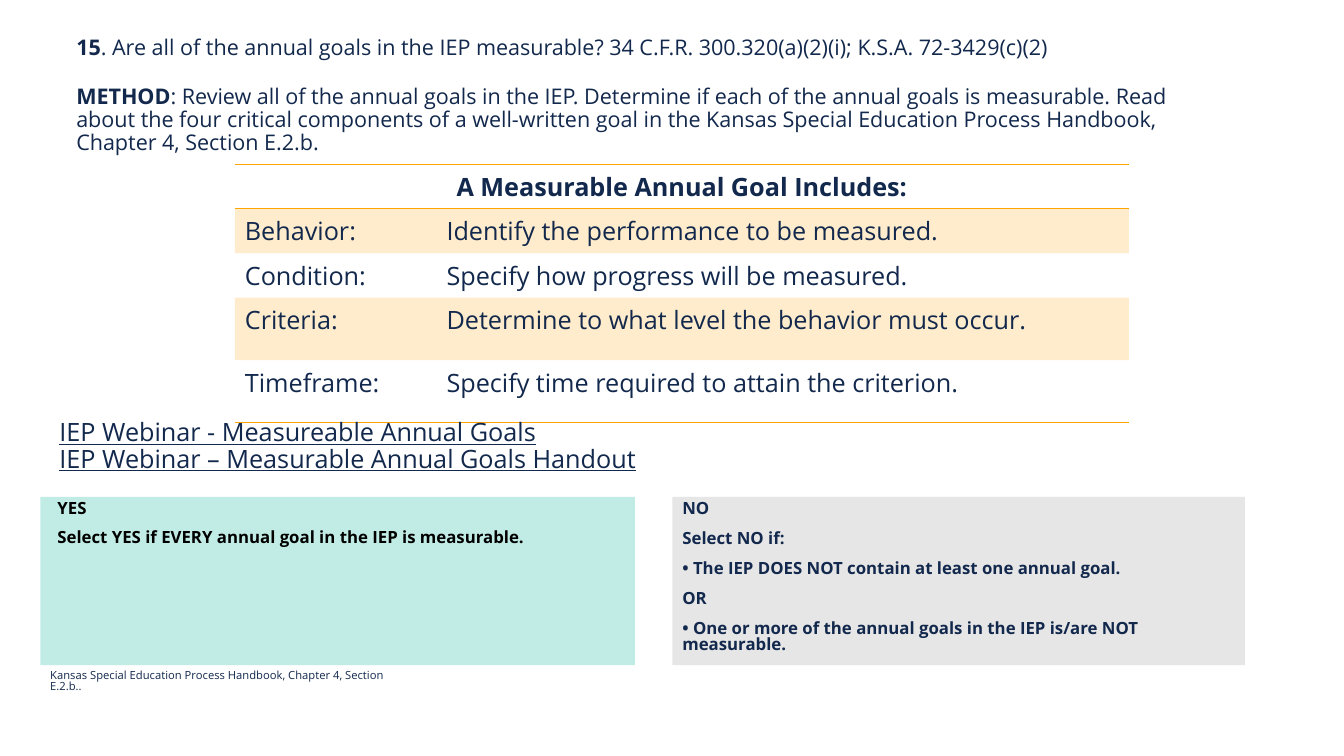
from lxml.etree import SubElement
from pptx import Presentation
from pptx.dml.color import RGBColor
from pptx.enum.shapes import MSO_SHAPE
from pptx.enum.text import MSO_ANCHOR, PP_ALIGN
from pptx.oxml.ns import qn
from pptx.util import Inches, Pt

COLORS = {"navy": "12284C", "black": "000000", "gold": "FFA400",
          "mint": "C1ECE5", "gray": "E6E6E6"}
FONT = "Open Sans"
WIDTH, HEIGHT = Inches(13.33), Inches(7.5)
COLUMNS, ROWS = 32, 18
PLAIN_STYLE = "{2D5ABB26-0587-4C30-8999-92F81FD0307C}"


def across(columns):
    """Return the width of a number of grid columns."""
    return round(WIDTH * columns / COLUMNS)


def down(rows):
    """Return the height of a number of grid rows."""
    return round(HEIGHT * rows / ROWS)


def place(box):
    """Turn a grid box into left, top, width and height."""
    left, top, width, height = box
    return across(left), down(top), across(width), down(height)


def style_run(run, size, color="navy", bold=False, underline=False):
    """Apply the slide's font to one run."""
    run.font.name = FONT
    run.font.size = Pt(size)
    run.font.bold = bold
    run.font.underline = underline
    run.font.color.rgb = RGBColor.from_string(COLORS[color])


def write_lines(frame, lines, size, spacing, before=0, **style):
    """Write one paragraph per line in a shared style."""
    frame.word_wrap = True
    frame.vertical_anchor = MSO_ANCHOR.TOP
    frame.text = "\n".join(lines)
    for index, paragraph in enumerate(frame.paragraphs):
        paragraph.alignment = PP_ALIGN.LEFT
        paragraph.line_spacing = spacing
        paragraph.space_before = Pt(before if index else 0)
        for run in paragraph.runs:
            style_run(run, size, **style)


def add_text(slide, box, lines, size, spacing, before=0, **style):
    """Add a text box of evenly styled lines."""
    frame = slide.shapes.add_textbox(*place(box)).text_frame
    write_lines(frame, lines, size, spacing, before, **style)
    return frame


def add_question(slide, box, entries):
    """Add paragraphs that each open with a bold label."""
    frame = add_text(slide, box, [label for label, _ in entries], 15.4, 0.89, 18.6, bold=True)
    for paragraph, (_, body) in zip(frame.paragraphs, entries):
        run = paragraph.add_run()
        run.text = body
        style_run(run, 15.4)


def add_border(cell, side):
    """Draw a gold line along one side of a cell."""
    line = SubElement(cell._tc.get_or_add_tcPr(), qn(f"a:{side}"), w=str(Pt(1)))
    fill = SubElement(line, qn("a:solidFill"))
    SubElement(fill, qn("a:srgbClr"), val=COLORS["gold"])


def tint_cell(cell):
    """Fill a cell with translucent gold."""
    cell.fill.solid()
    cell.fill.fore_color.rgb = RGBColor.from_string(COLORS["gold"])
    color = cell._tc.tcPr.find(f".//{qn('a:solidFill')}/{qn('a:srgbClr')}")
    SubElement(color, qn("a:alpha"), val="20000")


def add_goal_table(slide, box, heading, parts, heights):
    """Add the heading and the banded rows of goal components."""
    texts = [heading] + [f"{name}:\t{meaning}" for name, meaning in parts]
    table = slide.shapes.add_table(len(texts), 1, *place(box)).table
    table._tbl.tblPr.find(qn("a:tableStyleId")).text = PLAIN_STYLE
    for index, (text, height) in enumerate(zip(texts, heights)):
        table.rows[index].height = down(height)
        cell = table.cell(index, 0)
        cell.text = text
        paragraph = cell.text_frame.paragraphs[0]
        if index == 0:
            paragraph.alignment = PP_ALIGN.CENTER
            add_border(cell, "lnT")
        else:
            stops = SubElement(paragraph._p.get_or_add_pPr(), qn("a:tabLst"))
            SubElement(stops, qn("a:tab"), pos=str(Inches(2)), algn="l")
        if index in (0, len(texts) - 1):
            add_border(cell, "lnB")
        if index % 2:
            tint_cell(cell)
        else:
            cell.fill.background()
        style_run(paragraph.runs[0], 18, bold=index == 0)


def add_answer(slide, box, lines, fill, color, spacing, before, margins):
    """Add a filled panel that explains one answer."""
    shape = slide.shapes.add_shape(MSO_SHAPE.RECTANGLE, *place(box))
    shape.shadow.inherit = False
    shape.fill.solid()
    shape.fill.fore_color.rgb = RGBColor.from_string(COLORS[fill])
    shape.line.fill.background()
    frame = shape.text_frame
    frame.margin_left, frame.margin_top = (Inches(margin) for margin in margins)
    write_lines(frame, lines, 12, spacing, before, color=color, bold=True)


def build_slide(slide):
    """Place every region of the slide."""
    add_question(slide, (1.58, 0.77, 27.6, 3.43), [
        ("15", ". Are all of the annual goals in the IEP measurable? "
               "34 C.F.R. 300.320(a)(2)(i); K.S.A. 72-3429(c)(2)"),
        ("METHOD", ": Review all of the annual goals in the IEP. Determine if each of the "
                   "annual goals is measurable. Read about the four critical components of a "
                   "well-written goal in the Kansas Special Education Process Handbook, "
                   "Chapter 4, Section E.2.b."),
    ])
    add_goal_table(slide, (5.59, 3.91, 21.29, 6.16), "A Measurable Annual Goal Includes:", [
        ("Behavior", "Identify the performance to be measured."),
        ("Condition", "Specify how progress will be measured."),
        ("Criteria", "Determine to what level the behavior must occur."),
        ("Timeframe", "Specify time required to attain the criterion."),
    ], [1.06] * 3 + [1.49] * 2)
    add_text(slide, (1.18, 9.89, 16.56, 1.7), [
        "IEP Webinar - Measureable Annual Goals",
        "IEP Webinar – Measurable Annual Goals Handout",
    ], 18, 0.88, underline=True)
    add_answer(slide, (0.96, 11.83, 14.16, 4.01), [
        "YES",
        "Select YES if EVERY annual goal in the IEP is measurable.",
    ], "mint", "black", 0.87, 8, (0.17, 0.04))
    add_answer(slide, (16.01, 11.83, 13.63, 4.01), [
        "NO",
        "Select NO if:",
        "• The IEP DOES NOT contain at least one annual goal.",
        "OR",
        "• One or more of the annual goals in the IEP is/are NOT measurable.",
    ], "gray", "navy", 0.79, 10, (0.1, 0.05))
    add_text(slide, (0.96, 15.84, 9.02, 0.58), [
        "Kansas Special Education Process Handbook, Chapter 4, Section E.2.b..",
    ], 8, 0.86)


def main():
    """Build and save the presentation."""
    presentation = Presentation()
    presentation.slide_width, presentation.slide_height = WIDTH, HEIGHT
    build_slide(presentation.slides.add_slide(presentation.slide_layouts[6]))
    presentation.save("out.pptx")


if __name__ == "__main__":
    main()
